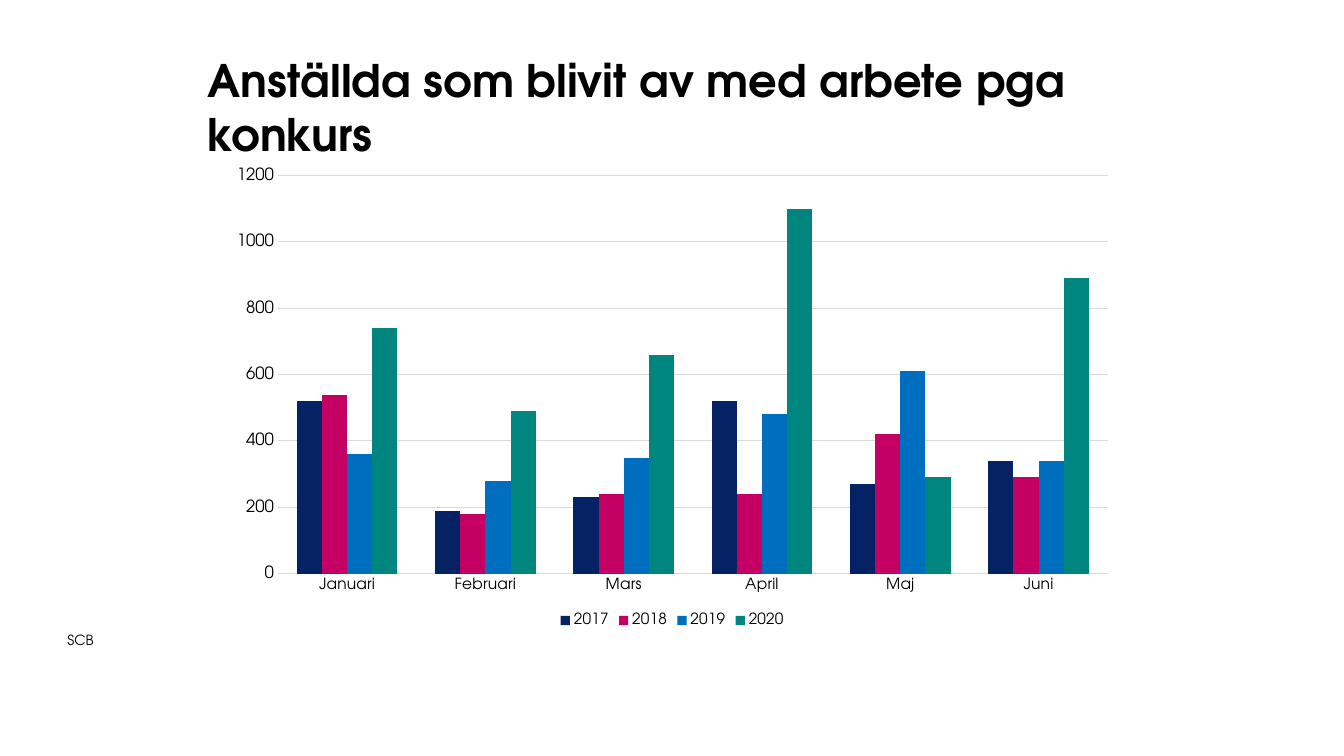
"""Build a slide with a column chart of jobs lost to bankruptcy, by month and year."""
from typing import NamedTuple

from pptx import Presentation
from pptx import util as u
from pptx.chart import data as cd
from pptx.dml import color as dml
from pptx.enum import chart as ec, text as et

FACE = "TeX Gyre Adventor"
BLACK = "000000"
GREY = "D9D9D9"


class Box(NamedTuple):
    left: float
    top: float
    width: float
    height: float


class Label(NamedTuple):
    words: str
    box: Box
    size: float
    bold: bool
    anchor: et.MSO_ANCHOR


class Year(NamedTuple):
    name: str
    counts: tuple[int, ...]
    tint: str


MONTHS = ("Januari", "Februari", "Mars", "April", "Maj", "Juni")
YEARS = (
    Year("2017", (520, 190, 230, 520, 270, 340), "052364"),
    Year("2018", (540, 180, 240, 240, 420, 290), "C40064"),
    Year("2019", (360, 280, 350, 480, 610, 340), "006EBF"),
    Year("2020", (740, 490, 660, 1100, 290, 890), "00867F"),
)
TITLE = Label("Anställda som blivit av med arbete pga konkurs",
              Box(148.3, 26.6, 663.8, 87.8), 32, True, et.MSO_ANCHOR.BOTTOM)
SOURCE = Label("SCB", Box(48.2, 451.4, 764.6, 14.4), 10, False, et.MSO_ANCHOR.TOP)
CHART = Box(156.2, 113, 648, 338.4)


def points(box: Box) -> tuple[u.Length, ...]:
    return tuple(u.Pt(side) for side in box)


def paint(target, tint: str) -> None:
    if hasattr(target, "solid"):
        target.solid()
        target = target.fore_color
    target.rgb = dml.RGBColor.from_string(tint)


def style(font, size: float, bold: bool = False) -> None:
    font.name, font.size, font.bold = FACE, u.Pt(size), bold
    paint(font.color, BLACK)


def write(shape, label: Label) -> None:
    shape.left, shape.top, shape.width, shape.height = points(label.box)
    frame = shape.text_frame
    frame.text = label.words
    frame.word_wrap = True
    frame.auto_size = et.MSO_AUTO_SIZE.NONE
    frame.vertical_anchor = label.anchor
    frame.margin_left = frame.margin_right = u.Pt(0)
    frame.margin_top = frame.margin_bottom = u.Pt(0)
    line = frame.paragraphs[0]
    line.alignment = et.PP_ALIGN.LEFT
    style(line.runs[0].font, label.size, label.bold)


def rule(line) -> None:
    line.width = u.Pt(0.75)
    paint(line.fill, GREY)


def plot(slide, box: Box) -> None:
    data = cd.CategoryChartData(number_format="0")
    data.categories = MONTHS
    for year in YEARS:
        data.add_series(year.name, year.counts)
    kind = ec.XL_CHART_TYPE.COLUMN_CLUSTERED
    chart = slide.shapes.add_chart(kind, *points(box), data).chart
    style(chart.font, 11)
    chart.has_title = False
    chart.has_legend = True
    chart.legend.position = ec.XL_LEGEND_POSITION.BOTTOM
    chart.legend.include_in_layout = False
    style(chart.legend.font, 11)

    bars = chart.plots[0]
    bars.gap_width, bars.overlap, bars.vary_by_categories = 150, 0, False
    for series, year in zip(bars.series, YEARS):
        paint(series.format.fill, year.tint)

    for axis, size in ((chart.category_axis, 11), (chart.value_axis, 12)):
        axis.major_tick_mark = axis.minor_tick_mark = ec.XL_TICK_MARK.NONE
        style(axis.tick_labels.font, size)
    rule(chart.category_axis.format.line)
    scale = chart.value_axis
    scale.minimum_scale, scale.maximum_scale, scale.major_unit = 0, 1200, 200
    scale.tick_labels.number_format = "0"
    scale.tick_labels.number_format_is_linked = False
    scale.format.line.fill.background()
    scale.has_major_gridlines = True
    rule(scale.major_gridlines.format.line)


def main() -> None:
    deck = Presentation()
    deck.slide_width, deck.slide_height = u.Pt(960), u.Pt(540)
    slide = deck.slides.add_slide(deck.slide_layouts.get_by_name("Title Only"))
    paint(slide.background.fill, "FFFFFF")
    write(slide.shapes.title, TITLE)
    write(slide.shapes.add_textbox(*points(SOURCE.box)), SOURCE)
    plot(slide, CHART)
    deck.save("out.pptx")


if __name__ == "__main__":
    main()
